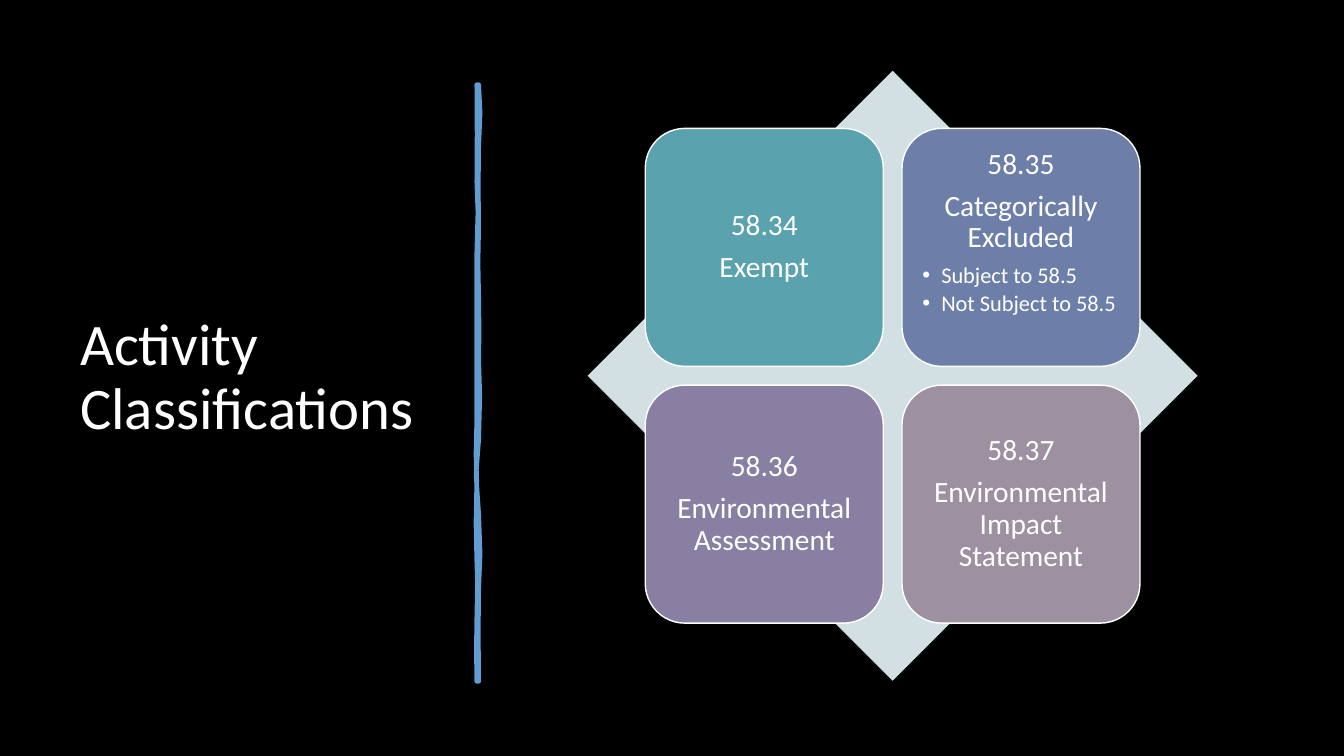
from lxml.etree import SubElement
from pptx import Presentation
from pptx.dml.color import RGBColor
from pptx.enum.shapes import MSO_SHAPE as Shape
from pptx.enum.text import MSO_ANCHOR as Anchor, PP_ALIGN as Align
from pptx.oxml.ns import qn
from pptx.util import Pt

FONT = "Calibri"
COLORS = {
    "background": "000000", "text": "FFFFFF", "divider": "629DD1", "diamond": "D2E0E3",
    "exempt": "5AA2AE", "excluded": "6D7FA8", "assessment": "887FA3", "impact": "9D90A0",
}

# Diamond and the two-by-two grid of cards share one centre
CENTER_X, CENTER_Y = 637.6, 268.4
DIAMOND_SIZE, CARD_SIZE, CARD_GAP = 435.6, 170, 13.4

CARDS = [
    ("exempt", ["58.34", "Exempt"], []),
    ("excluded", ["58.35", "Categorically Excluded"], ["Subject to 58.5", "Not Subject to 58.5"]),
    ("assessment", ["58.36", "Environmental Assessment"], []),
    ("impact", ["58.37", "Environmental Impact Statement"], []),
]

# Hand-drawn divider: right edge downwards, then left edge upwards
DIVIDER_OUTLINE = [
    (342, 60.5), (343, 80.4), (342, 105.1), (341.7, 133), (342, 162.7), (341.5, 187),
    (342, 211.7), (342.3, 238.5), (342, 256.3), (342.8, 283), (342, 313.9),
    (340.1, 339.2), (342, 367.2), (343, 395.5), (342, 420.5), (341.7, 451.7), (342, 486.7),
    (340.6, 486.7), (340.3, 464.3), (340.6, 441.4), (341.1, 416.7), (340.6, 401),
    (340, 373.6), (340.6, 343.4), (340, 324.4), (340.6, 298.8), (340.6, 272.4),
    (340.6, 241.2), (340.6, 209), (340.6, 180), (341.4, 151.7), (340.6, 130.3),
    (340.8, 95.9), (340.6, 60.5),
]


def color(name):
    return RGBColor.from_string(COLORS[name])


def paint(shape, fill, line=None, width=1):
    shape.shadow.inherit = False
    shape.fill.solid()
    shape.fill.fore_color.rgb = color(fill)
    if line:
        shape.line.color.rgb = color(line)
        shape.line.width = Pt(width)
    else:
        shape.line.fill.background()


def format_paragraph(paragraph, size, align, space_after=0):
    paragraph.alignment = align
    paragraph.line_spacing = 0.9
    paragraph.space_after = Pt(space_after)
    for run in paragraph.runs:
        run.font.name = FONT
        run.font.size = Pt(size)
        run.font.color.rgb = color("text")


def add_bullet(paragraph, indent=13.5):
    properties = paragraph._p.get_or_add_pPr()
    properties.set("marL", str(Pt(indent)))
    properties.set("indent", str(-Pt(indent)))
    SubElement(properties, qn("a:buFont"), typeface="Arial")
    SubElement(properties, qn("a:buChar"), char="•")


def add_title(slide, text):
    title = slide.shapes.add_textbox(Pt(50.2), Pt(50.4), Pt(269.3), Pt(440))
    frame = title.text_frame
    frame.word_wrap = True
    frame.vertical_anchor = Anchor.MIDDLE
    frame.text = text
    format_paragraph(frame.paragraphs[0], 42, Align.LEFT)


def add_divider(slide):
    start, *corners = [(Pt(x), Pt(y)) for x, y in DIVIDER_OUTLINE]
    outline = slide.shapes.build_freeform(*start)
    outline.add_line_segments(corners, close=True)
    divider = outline.convert_to_shape()
    paint(divider, "divider", "divider", 3.25)
    SubElement(divider.line._get_or_add_ln(), qn("a:round"))


def add_diamond(slide):
    left, top = CENTER_X - DIAMOND_SIZE / 2, CENTER_Y - DIAMOND_SIZE / 2
    diamond = slide.shapes.add_shape(
        Shape.DIAMOND, Pt(left), Pt(top), Pt(DIAMOND_SIZE), Pt(DIAMOND_SIZE))
    paint(diamond, "diamond")


def add_card(slide, row, column, fill, headings, bullets):
    pitch = CARD_SIZE + CARD_GAP
    left = CENTER_X - CARD_GAP / 2 - CARD_SIZE + column * pitch
    top = CENTER_Y - CARD_GAP / 2 - CARD_SIZE + row * pitch
    card = slide.shapes.add_shape(
        Shape.ROUNDED_RECTANGLE, Pt(left), Pt(top), Pt(CARD_SIZE), Pt(CARD_SIZE))
    paint(card, fill, "text")
    frame = card.text_frame
    frame.word_wrap = True
    frame.vertical_anchor = Anchor.TOP if bullets else Anchor.MIDDLE
    frame.margin_left = frame.margin_right = frame.margin_top = frame.margin_bottom = Pt(6.3)
    frame.text = "\n".join(headings + bullets)
    for index, paragraph in enumerate(frame.paragraphs):
        if index < len(headings):
            format_paragraph(paragraph, 21, Align.CENTER, 7.35)
        else:
            format_paragraph(paragraph, 16, Align.LEFT, 2.4)
            paragraph.level = 1
            add_bullet(paragraph)


def main():
    deck = Presentation()
    deck.slide_width, deck.slide_height = Pt(960), Pt(540)
    slide = deck.slides.add_slide(deck.slide_layouts[6])
    slide.background.fill.solid()
    slide.background.fill.fore_color.rgb = color("background")

    # Left side
    add_title(slide, "Activity Classifications")
    add_divider(slide)

    # Classification matrix
    add_diamond(slide)
    for index, card in enumerate(CARDS):
        add_card(slide, *divmod(index, 2), *card)

    deck.save("out.pptx")


if __name__ == "__main__":
    main()
